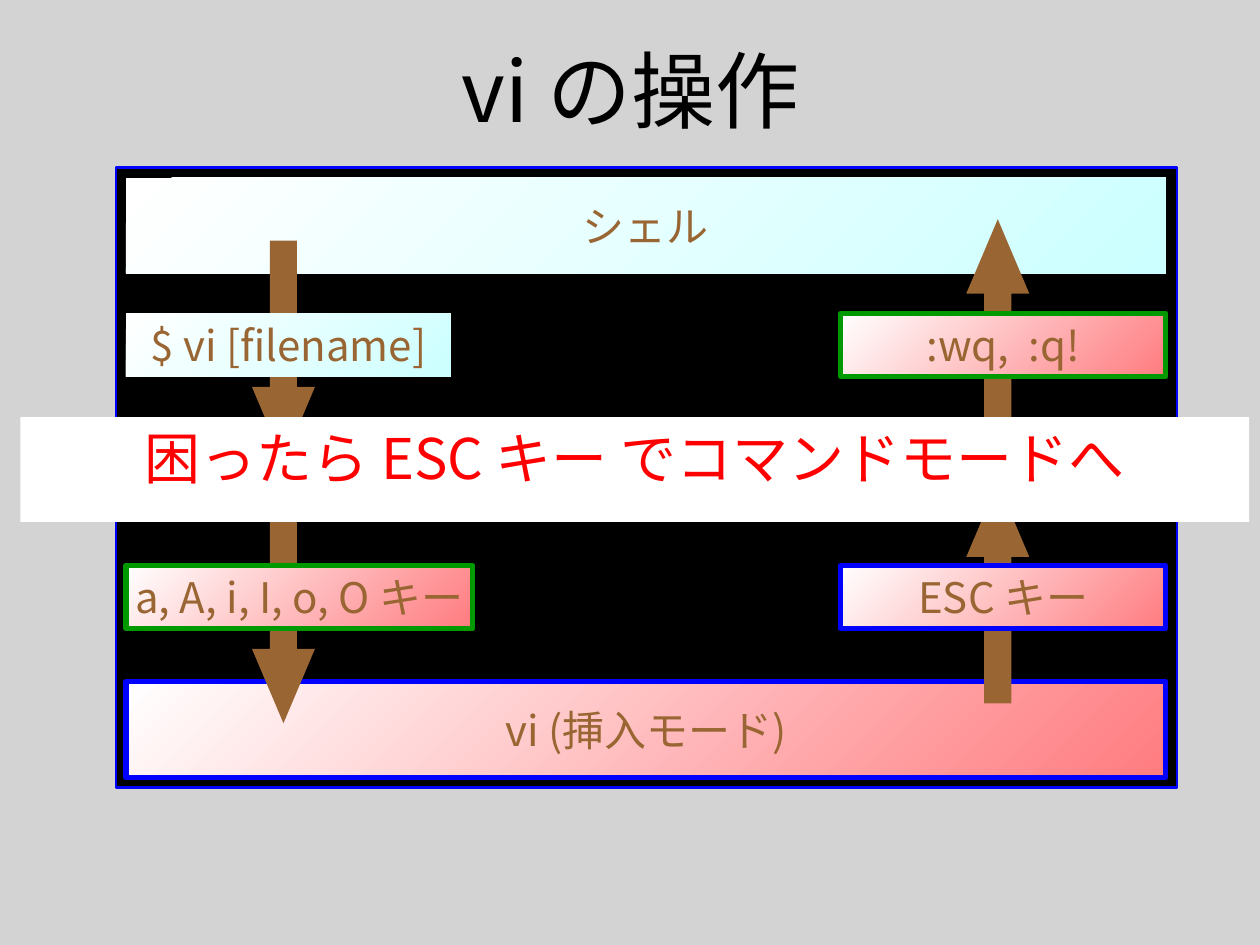
from typing import NamedTuple, Optional

from lxml.etree import SubElement
from pptx import Presentation
from pptx.dml.color import RGBColor
from pptx.enum.shapes import MSO_SHAPE
from pptx.enum.text import MSO_ANCHOR, MSO_AUTO_SIZE, PP_ALIGN
from pptx.oxml.ns import qn
from pptx.util import Cm, Pt

FACE = "Noto Sans CJK JP"
BROWN, BLUE, GREEN = "996633", "0000FF", "009900"
PINK, AQUA = "FF7C80", "CCFFFF"

# Lengths in cm
LEFT, WIDE, SLIM = 2.54, 20.96, 6.55
RIGHT = LEFT + WIDE - SLIM
UPPER, LOWER = 6.32, 11.4
BAR, LABEL = 1.93, 1.27


class Box(NamedTuple):
    text: str
    x: float
    y: float
    w: float
    h: float
    tint: str
    edge: Optional[str] = None


class Arrow(NamedTuple):
    kind: MSO_SHAPE
    x: float
    y: float


DOWN, UP = MSO_SHAPE.DOWN_ARROW, MSO_SHAPE.UP_ARROW

# Back to front: labels cover the arrows, arrows cover the bars
PARTS = [
    Box("シェル", LEFT, 3.58, WIDE, BAR, AQUA),
    Box("vi (挿入モード)", LEFT, 13.74, WIDE, BAR, PINK, BLUE),
    Arrow(DOWN, 5.08, 4.85),
    Arrow(DOWN, 5.08, 10.13),
    Box("a, A, i, I, o, O キー", LEFT, LOWER, 6.99, LABEL, PINK, GREEN),
    Box("$ vi [filename]", LEFT, UPPER, SLIM, LABEL, AQUA),
    Arrow(UP, 19.48, 9.73),
    Box("ESC キー", RIGHT, LOWER, SLIM, LABEL, PINK, BLUE),
    Arrow(UP, 19.48, 4.42),
    Box(":wq,  :q!", RIGHT, UPPER, SLIM, LABEL, PINK, GREEN),
]


def color(code: str) -> RGBColor:
    return RGBColor.from_string(code)


def apply(item, form: dict) -> None:
    """Set each named attribute of the item."""
    for name, value in form.items():
        setattr(item, name, value)


def place(shape, x: float, y: float, w: float, h: float) -> None:
    apply(shape, {"left": Cm(x), "top": Cm(y), "width": Cm(w), "height": Cm(h)})


def write(shape, text: str, size: int, code: str, anchor, wrap: bool) -> None:
    frame = shape.text_frame
    frame.text = text
    apply(frame, {"word_wrap": wrap, "vertical_anchor": anchor,
                  "auto_size": MSO_AUTO_SIZE.NONE})
    line = frame.paragraphs[0]
    line.alignment = PP_ALIGN.CENTER
    font = line.runs[0].font
    apply(font, {"name": FACE, "size": Pt(size)})
    font.color.rgb = color(code)
    # East Asian glyphs take their own typeface
    props = line.runs[0]._r.get_or_add_rPr()
    SubElement(props, qn("a:ea")).set("typeface", FACE)


def paint(shape, code: str) -> None:
    shape.fill.solid()
    shape.fill.fore_color.rgb = color(code)


def trim(shape, code: Optional[str], width: float) -> None:
    """Drop the shadow and draw the outline, if there is one."""
    shape.shadow.inherit = False
    if code:
        shape.line.color.rgb = color(code)
        shape.line.width = Pt(width)
    else:
        shape.line.fill.background()


def add(group, kind, x: float, y: float, w: float, h: float):
    return group.shapes.add_shape(kind, Cm(x), Cm(y), Cm(w), Cm(h))


def draw_box(group, box: Box) -> None:
    shape = add(group, MSO_SHAPE.FLOWCHART_PROCESS, box.x, box.y, box.w, box.h)
    shape.fill.gradient()
    shape.fill.gradient_angle = 315
    for stop, code in zip(shape.fill.gradient_stops, ("FFFFFF", box.tint)):
        stop.color.rgb = color(code)
    trim(shape, box.edge, 3)
    write(shape, box.text, 24, BROWN, MSO_ANCHOR.MIDDLE, False)


def draw_arrow(group, arrow: Arrow) -> None:
    shape = add(group, arrow.kind, arrow.x, arrow.y, 1.27, 4.45)
    shape.adjustments[0] = 0.43
    shape.adjustments[1] = 1.18
    paint(shape, BROWN)
    trim(shape, None, 0)


def main() -> None:
    deck = Presentation()
    apply(deck, {"slide_width": Cm(25.4), "slide_height": Cm(19.05)})
    slide = deck.slides.add_slide(deck.slide_layouts[1])
    back = slide.background.fill
    back.solid()
    back.fore_color.rgb = color("D3D3D3")
    title, body = slide.placeholders

    group = slide.shapes.add_group_shape()
    panel = add(group, MSO_SHAPE.RECTANGLE, 2.34, 3.38, 21.39, 12.5)
    paint(panel, "000000")
    trim(panel, BLUE, 1.5)
    for part in PARTS:
        draw = draw_box if isinstance(part, Box) else draw_arrow
        draw(group, part)

    place(body, 0.41, 8.41, 24.77, 2.11)
    paint(body, "FFFFFF")
    write(body, "困ったら ESC キー でコマンドモードへ", 32, "FF0000",
          MSO_ANCHOR.TOP, True)
    line = body.text_frame.paragraphs[0]
    line.space_before = Pt(6)
    props = line._p.get_or_add_pPr()
    apply_indent = {"marL": Cm(0.95), "indent": -Cm(0.95)}
    for name, value in apply_indent.items():
        props.set(name, str(int(value)))
    SubElement(props, qn("a:buNone"))

    place(title, 1.91, 0.2, 21.59, 3.18)
    write(title, "vi の操作", 48, "000000", MSO_ANCHOR.MIDDLE, True)

    # The banner and the title lie in front of the diagram
    for shape in (body, title):
        slide.shapes._spTree.append(shape._element)
    deck.save("out.pptx")


if __name__ == "__main__":
    main()
